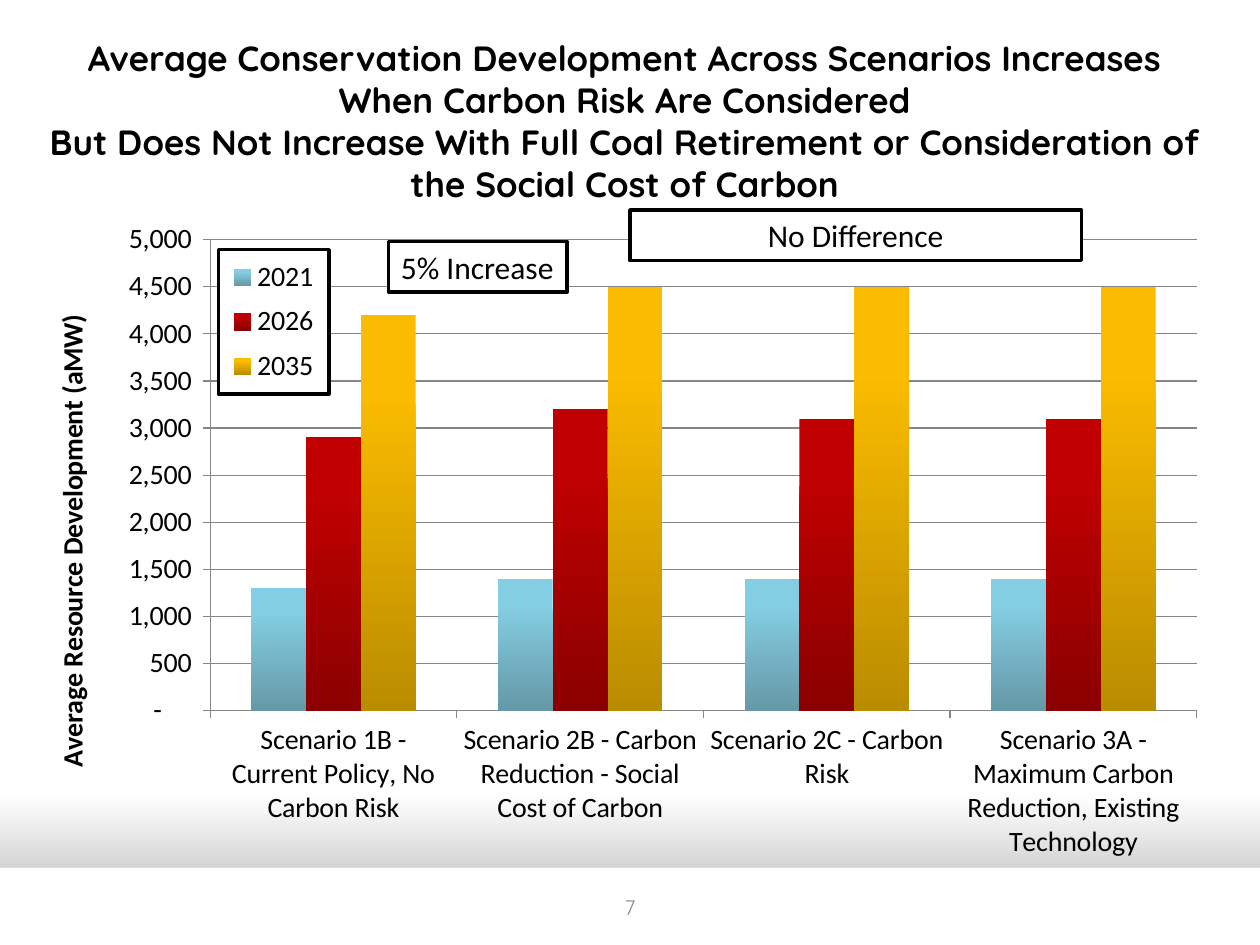
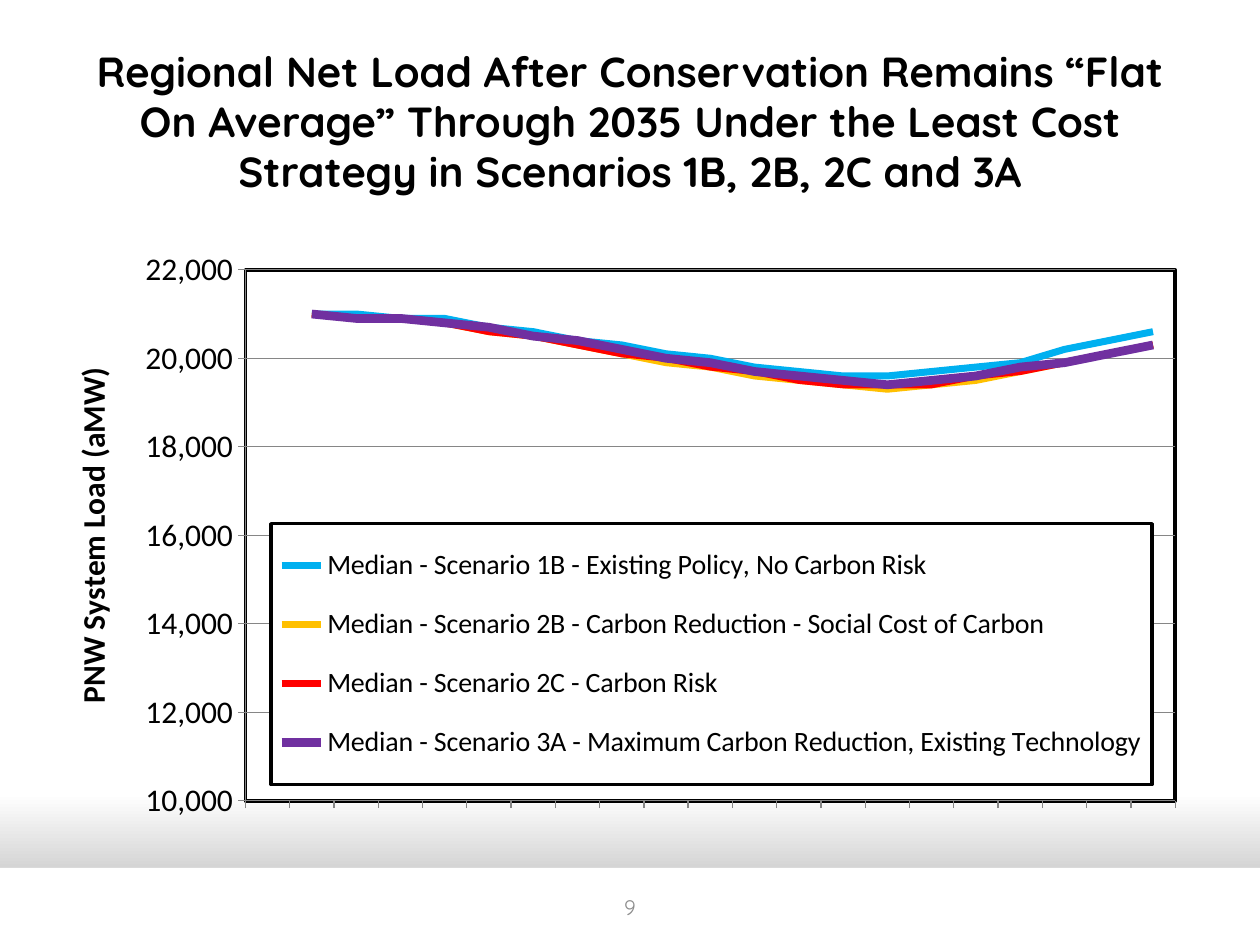
from lxml import etree
from pptx import Presentation
from pptx.chart.data import CategoryChartData
from pptx.dml.color import RGBColor
from pptx.enum.chart import XL_CHART_TYPE, XL_LEGEND_POSITION, XL_TICK_LABEL_POSITION, XL_TICK_MARK
from pptx.enum.shapes import MSO_SHAPE
from pptx.enum.text import MSO_ANCHOR, MSO_AUTO_SIZE, PP_ALIGN
from pptx.oxml.ns import qn
from pptx.util import Pt

COLUMNS, LINES = XL_CHART_TYPE.COLUMN_CLUSTERED, XL_CHART_TYPE.LINE
LEFT, CENTER = PP_ALIGN.LEFT, PP_ALIGN.CENTER
MIDDLE = MSO_ANCHOR.MIDDLE

BLACK, WHITE, GRID_GREY, NUMBER_GREY = "000000", "FFFFFF", "868686", "8C8C8C"
HEAD_FONT, BODY_FONT = "Quicksand", "Calibri"
SLIDE_W, SLIDE_H = 720, 540
BAND_TOP = 496
ACCOUNTING = '_(* #,##0_);_(* \\(#,##0\\);_(* "-"??_);_(@_)'

SCENARIOS = [
    "Scenario 1B - Current Policy, No Carbon Risk",
    "Scenario 2B - Carbon Reduction - Social Cost of Carbon",
    "Scenario 2C - Carbon Risk",
    "Scenario 3A - Maximum Carbon Reduction, Existing Technology",
]
# name, values, top colour, bottom colour
DEVELOPMENT = [
    ("2021", (1300, 1400, 1400, 1400), "83CEE2", "6699A8"),
    ("2026", (2900, 3200, 3100, 3100), "C00000", "8A0000"),
    ("2035", (4200, 4500, 4500, 4500), "FABC00", "BA8C00"),
]
YEARS = [str(year) for year in range(2015, 2036)]
# name, values in hundreds of aMW from 2016 on, colour, line width
NET_LOAD = [
    ("Median - Scenario 1B - Existing Policy, No Carbon Risk",
     (210, 210, 209, 209, 207, 206, 204, 203, 201, 200,
      198, 197, 196, 196, 197, 198, 199, 202, 204, 206), "00B0F0", 4),
    ("Median - Scenario 2B - Carbon Reduction - Social Cost of Carbon",
     (210, 209, 209, 208, 206, 205, 203, 201, 199, 198,
      196, 195, 194, 193, 194, 195, 197, 199, 201, 203), "FFC000", 4),
    ("Median - Scenario 2C - Carbon Risk",
     (210, 209, 209, 208, 206, 205, 203, 201, 200, 198,
      197, 195, 194, 194, 194, 196, 197, 199, 201, 203), "FF0000", 4),
    ("Median - Scenario 3A - Maximum Carbon Reduction, Existing Technology",
     (210, 209, 209, 208, 207, 205, 204, 202, 200, 199,
      197, 196, 195, 194, 195, 196, 198, 199, 201, 203), "7030A0", 5),
]


def rgb(value):
    return RGBColor.from_string(value)


def set_font(font, size, color=BLACK, name=BODY_FONT, bold=False):
    font.size, font.name, font.bold = Pt(size), name, bold
    font.color.rgb = rgb(color)


def set_gradient(fill, stops):
    """Fill from top to bottom with two (position, colour) stops."""
    fill.gradient()
    fill.gradient_angle = 270
    for stop, (position, color) in zip(fill.gradient_stops, stops):
        stop.position = position
        stop.color.rgb = rgb(color)


def place(shape, box):
    shape.left, shape.top, shape.width, shape.height = map(Pt, box)


def add_rect(slide, box, outline=None):
    rect = slide.shapes.add_shape(MSO_SHAPE.RECTANGLE, *map(Pt, box))
    rect.shadow.inherit = False
    rect.fill.solid()
    rect.fill.fore_color.rgb = rgb(WHITE)
    if outline:
        rect.line.color.rgb = rgb(outline)
        rect.line.width = Pt(2)
    else:
        rect.line.fill.background()
    return rect


def set_text(shape, text, size, align=CENTER, **style):
    frame = shape.text_frame
    frame.word_wrap = True
    frame.auto_size = MSO_AUTO_SIZE.NONE
    frame.vertical_anchor = MIDDLE
    frame.text = text
    paragraph = frame.paragraphs[0]
    paragraph.alignment = align
    set_font(paragraph.font, size, **style)


def start_slide(prs, title, title_box, title_size, number):
    slide = prs.slides.add_slide(prs.slide_layouts[5])
    add_rect(slide, (0, BAND_TOP, SLIDE_W, SLIDE_H - BAND_TOP))
    place(slide.shapes.title, title_box)
    set_text(slide.shapes.title, title, title_size, name=HEAD_FONT, bold=True)
    page = slide.shapes.add_textbox(*map(Pt, (276, 504, 168, 29)))
    set_text(page, number, 12, name=HEAD_FONT, color=NUMBER_GREY)
    return slide


def add_callout(slide, text, box, align):
    set_text(add_rect(slide, box, BLACK), text, 18, align)


def make_layout(fractions, inner=False):
    """Manual layout element from x, y, w, h as fractions of the chart."""
    layout = etree.Element(qn("c:layout"))
    manual = etree.SubElement(layout, qn("c:manualLayout"))
    settings = [("layoutTarget", "inner")] if inner else []
    settings += [("xMode", "edge"), ("yMode", "edge")]
    settings += zip("xywh", map(str, fractions))
    for tag, value in settings:
        etree.SubElement(manual, qn("c:" + tag)).set("val", value)
    return layout


def style_outline(parent, after_tag):
    """White box with a black outline, placed after the last child of that tag."""
    props = etree.Element(qn("c:spPr"))
    fill = etree.SubElement(props, qn("a:solidFill"))
    etree.SubElement(fill, qn("a:srgbClr")).set("val", WHITE)
    line = etree.SubElement(props, qn("a:ln"), w=str(Pt(2)))
    ink = etree.SubElement(line, qn("a:solidFill"))
    etree.SubElement(ink, qn("a:srgbClr")).set("val", BLACK)
    parent.findall(qn(after_tag))[-1].addnext(props)


def place_plot(chart, fractions):
    plot_area = chart.element.find(".//" + qn("c:plotArea"))
    for old in plot_area.findall(qn("c:layout")):
        plot_area.remove(old)
    plot_area.insert(0, make_layout(fractions, inner=True))
    return plot_area


def add_legend(chart, fractions):
    chart.has_legend = True
    legend = chart.legend
    legend.position = XL_LEGEND_POSITION.RIGHT
    legend.include_in_layout = False
    set_font(legend.font, 16)
    element = legend._element
    for old in element.findall(qn("c:layout")):
        element.remove(old)
    element.find(qn("c:legendPos")).addnext(make_layout(fractions))
    style_outline(element, "c:overlay")


def style_axes(chart, title, size, scale, number_format):
    value, category = chart.value_axis, chart.category_axis
    value.minimum_scale, value.maximum_scale, value.major_unit = scale
    value.has_major_gridlines = True
    value.major_gridlines.format.line.color.rgb = rgb(GRID_GREY)
    value.major_gridlines.format.line.width = Pt(0.75)
    value.tick_labels.number_format = number_format
    value.tick_labels.number_format_is_linked = False
    value.axis_title.text_frame.text = title
    set_font(value.axis_title.text_frame.paragraphs[0].font, size, bold=True)
    for axis in (value, category):
        axis.major_tick_mark = XL_TICK_MARK.OUTSIDE
        axis.format.line.color.rgb = rgb(GRID_GREY)
        set_font(axis.tick_labels.font, size)


def add_chart(slide, kind, box, categories, series):
    data = CategoryChartData(number_format="#,##0")
    data.categories = categories
    for name, values in series:
        data.add_series(name, values)
    chart = slide.shapes.add_chart(kind, *map(Pt, box), data).chart
    chart.has_title = False
    return chart


def add_development_chart(slide, box):
    chart = add_chart(slide, COLUMNS, box, SCENARIOS, [row[:2] for row in DEVELOPMENT])
    set_font(chart.font, 16)
    style_axes(chart, "Average Resource Development (aMW)", 16, (0, 5000, 500), ACCOUNTING)
    place_plot(chart, (0.143, 0.045, 0.839, 0.712))
    add_legend(chart, (0.15, 0.06, 0.094, 0.218))
    plot = chart.plots[0]
    plot.vary_by_categories = False
    plot.gap_width, plot.overlap = 150, 0
    for bars, (_, _, top, bottom) in zip(plot.series, DEVELOPMENT):
        set_gradient(bars.format.fill, ((0.2, top), (1, bottom)))


def add_load_chart(slide, box):
    rows = [(name, [None] + [100 * load for load in loads]) for name, loads, _, _ in NET_LOAD]
    chart = add_chart(slide, LINES, box, YEARS, rows)
    set_font(chart.font, 18)
    style_axes(chart, "PNW System Load (aMW)", 18, (10000, 22000, 2000), "#,##0")
    chart.category_axis.tick_label_position = XL_TICK_LABEL_POSITION.NONE
    plot_area = place_plot(chart, (0.158, 0.045, 0.805, 0.843))
    style_outline(plot_area, "c:valAx")
    add_legend(chart, (0.18, 0.448, 0.763, 0.414))
    chart.plots[0].vary_by_categories = False
    for curve, (_, _, color, width) in zip(chart.plots[0].series, NET_LOAD):
        curve.smooth = False
        curve.format.line.color.rgb = rgb(color)
        curve.format.line.width = Pt(width)


def build_development_slide(prs):
    slide = start_slide(
        prs,
        "Average Conservation Development Across Scenarios Increases "
        "When Carbon Risk Are Considered\v"
        "But Does Not Increase With Full Coal Retirement or Consideration of "
        "the Social Cost of Carbon",
        (18, 12, 678, 114), 20, "7")
    add_development_chart(slide, (24, 120, 672, 378))
    add_callout(slide, "5% Increase", (222, 138, 102, 29), LEFT)
    add_callout(slide, "No Difference", (360, 120, 258, 29), CENTER)


def build_load_slide(prs):
    slide = start_slide(
        prs,
        "Regional Net Load After Conservation Remains “Flat On Average” Through 2035 "
        "Under the Least Cost Strategy in Scenarios 1B, 2B, 2C and 3A",
        (36, 24, 648, 90), 24, "9")
    add_load_chart(slide, (36, 138, 660, 360))


def main():
    prs = Presentation()
    prs.slide_width, prs.slide_height = Pt(SLIDE_W), Pt(SLIDE_H)
    set_gradient(prs.slide_master.background.fill, ((0.84, WHITE), (1, "A6A6A6")))
    build_development_slide(prs)
    build_load_slide(prs)
    prs.save("out.pptx")


if __name__ == "__main__":
    main()
